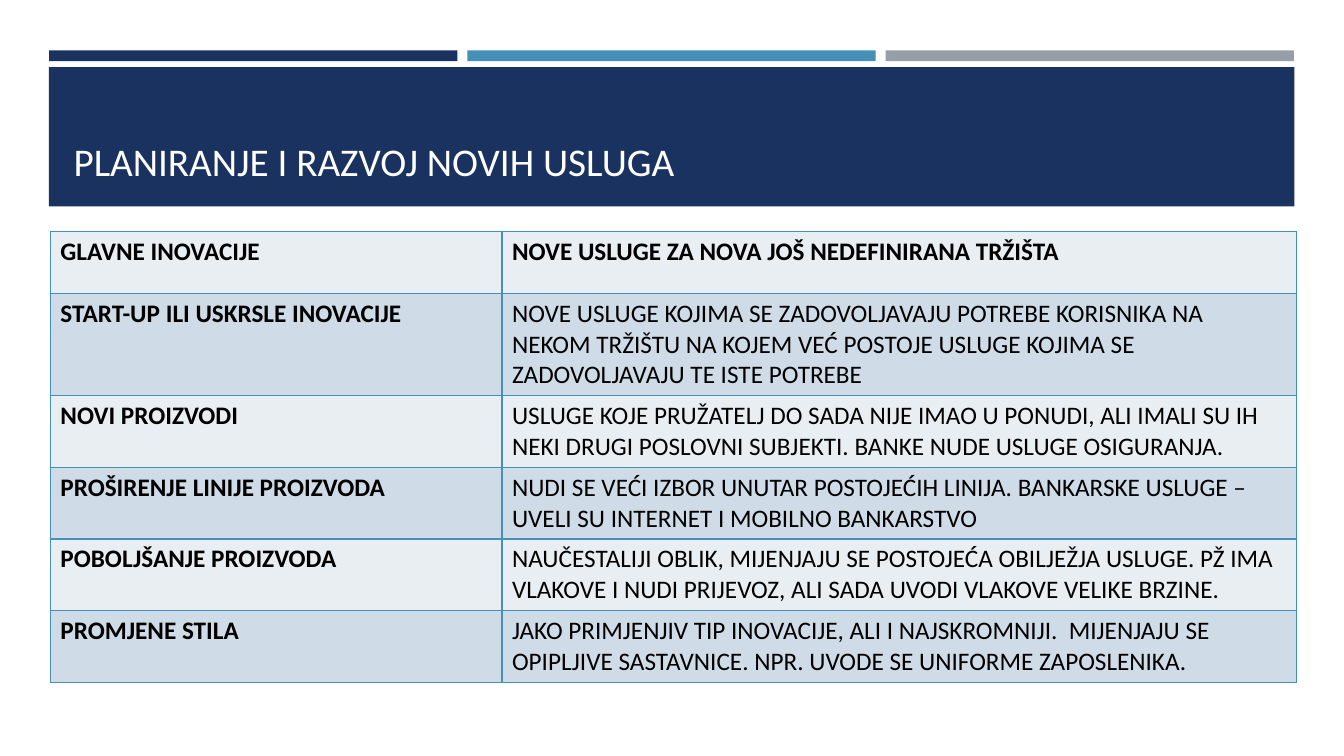
from dataclasses import dataclass

from lxml import etree
from pptx import Presentation
from pptx.dml.color import RGBColor
from pptx.enum.shapes import MSO_SHAPE
from pptx.enum.text import MSO_ANCHOR, MSO_AUTO_SIZE, PP_ALIGN
from pptx.oxml.ns import qn
from pptx.util import Cm, Pt

RECT = MSO_SHAPE.RECTANGLE
BOTTOM, TOP = MSO_ANCHOR.BOTTOM, MSO_ANCHOR.TOP
LEFT = PP_ALIGN.LEFT
NO_AUTOFIT = MSO_AUTO_SIZE.NONE

TITLE = "PLANIRANJE I RAZVOJ NOVIH USLUGA"
INNOVATIONS = [
    ("GLAVNE INOVACIJE", "NOVE USLUGE ZA NOVA JOŠ NEDEFINIRANA TRŽIŠTA"),
    ("START-UP ILI USKRSLE INOVACIJE",
     "NOVE USLUGE KOJIMA SE ZADOVOLJAVAJU POTREBE KORISNIKA NA NEKOM TRŽIŠTU "
     "NA KOJEM VEĆ POSTOJE USLUGE KOJIMA SE ZADOVOLJAVAJU TE ISTE POTREBE"),
    ("NOVI PROIZVODI",
     "USLUGE KOJE PRUŽATELJ DO SADA NIJE IMAO U PONUDI, ALI IMALI SU IH NEKI "
     "DRUGI POSLOVNI SUBJEKTI. BANKE NUDE USLUGE OSIGURANJA."),
    ("PROŠIRENJE LINIJE PROIZVODA",
     "NUDI SE VEĆI IZBOR UNUTAR POSTOJEĆIH LINIJA. BANKARSKE USLUGE – UVELI SU "
     "INTERNET I MOBILNO BANKARSTVO"),
    ("POBOLJŠANJE PROIZVODA",
     "NAUČESTALIJI OBLIK, MIJENJAJU SE POSTOJEĆA OBILJEŽJA USLUGE. PŽ IMA "
     "VLAKOVE I NUDI PRIJEVOZ, ALI SADA UVODI VLAKOVE VELIKE BRZINE."),
    ("PROMJENE STILA",
     "JAKO PRIMJENJIV TIP INOVACIJE, ALI I NAJSKROMNIJI.  MIJENJAJU SE "
     "OPIPLJIVE SASTAVNICE. NPR. UVODE SE UNIFORME ZAPOSLENIKA."),
]


@dataclass(frozen=True)
class Theme:
    font: str = "Calibri"
    title_size: int = 28
    cell_size: int = 18
    navy: str = "1A3260"
    blue: str = "4590B8"
    grey: str = "969FA7"
    white: str = "FFFFFF"
    black: str = "000000"
    bands: tuple = ("E9EEF3", "CFDBE6")


THEME = Theme()
BAR_LEFT, BAR_PITCH, BAR_WIDTH = 1.24, 10.54, 10.29
COLUMN_WIDTHS = (11.38, 20.02)
ROW_HEIGHT = 1.55


def write(tf, text, size, color, bold=False):
    p = tf.paragraphs[0]
    p.alignment = LEFT
    r = p.add_run()
    r.text = text
    r.font.name = THEME.font
    r.font.size = Pt(size)
    r.font.bold = bold
    r.font.color.rgb = RGBColor.from_string(color)


def add_block(s, left, top, width, height, color):
    block = s.shapes.add_shape(RECT, Cm(left), Cm(top), Cm(width), Cm(height))
    block.shadow.inherit = False
    block.fill.solid()
    block.fill.fore_color.rgb = RGBColor.from_string(color)
    block.line.fill.background()


def add_borders(cell, color, width):
    """Draw all four cell borders; call before setting the cell's fill."""
    props = cell._tc.get_or_add_tcPr()
    for side in ("lnL", "lnR", "lnT", "lnB"):
        line = etree.SubElement(props, qn(f"a:{side}"), w=str(Pt(width)))
        fill = etree.SubElement(line, qn("a:solidFill"))
        etree.SubElement(fill, qn("a:srgbClr"), val=color)


def add_header(s):
    for i, color in enumerate((THEME.navy, THEME.blue, THEME.grey)):
        add_block(s, BAR_LEFT + i * BAR_PITCH, 1.27, BAR_WIDTH, 0.27, color)
    add_block(s, 1.23, 1.69, 31.39, 3.51, THEME.navy)

    title = s.shapes.title
    title.left, title.top, title.width, title.height = Cm(1.6), Cm(2.03), Cm(30.63), Cm(2.74)
    tf = title.text_frame
    tf.word_wrap = True
    tf.auto_size = NO_AUTOFIT
    tf.vertical_anchor = BOTTOM
    write(tf, TITLE, THEME.title_size, THEME.white)
    # The title has to lie in front of its banner.
    title.element.getparent().append(title.element)


def add_innovation_table(s):
    table = s.shapes.add_table(
        len(INNOVATIONS), len(COLUMN_WIDTHS), Cm(1.27), Cm(5.84),
        Cm(sum(COLUMN_WIDTHS)), Cm(ROW_HEIGHT * len(INNOVATIONS))).table
    for column, width in zip(table.columns, COLUMN_WIDTHS):
        column.width = Cm(width)
    for i, texts in enumerate(INNOVATIONS):
        table.rows[i].height = Cm(ROW_HEIGHT)
        for j, text in enumerate(texts):
            cell = table.cell(i, j)
            add_borders(cell, THEME.blue, 1)
            cell.fill.solid()
            cell.fill.fore_color.rgb = RGBColor.from_string(THEME.bands[i % 2])
            cell.vertical_anchor = TOP
            write(cell.text_frame, text, THEME.cell_size, THEME.black,
                  bold=i == 0 or j == 0)


def main():
    prs = Presentation()
    prs.slide_width, prs.slide_height = Cm(33.87), Cm(19.05)
    s = prs.slides.add_slide(prs.slide_layouts.get_by_name("Title Only"))
    add_header(s)
    add_innovation_table(s)
    prs.save("out.pptx")


if __name__ == "__main__":
    main()
